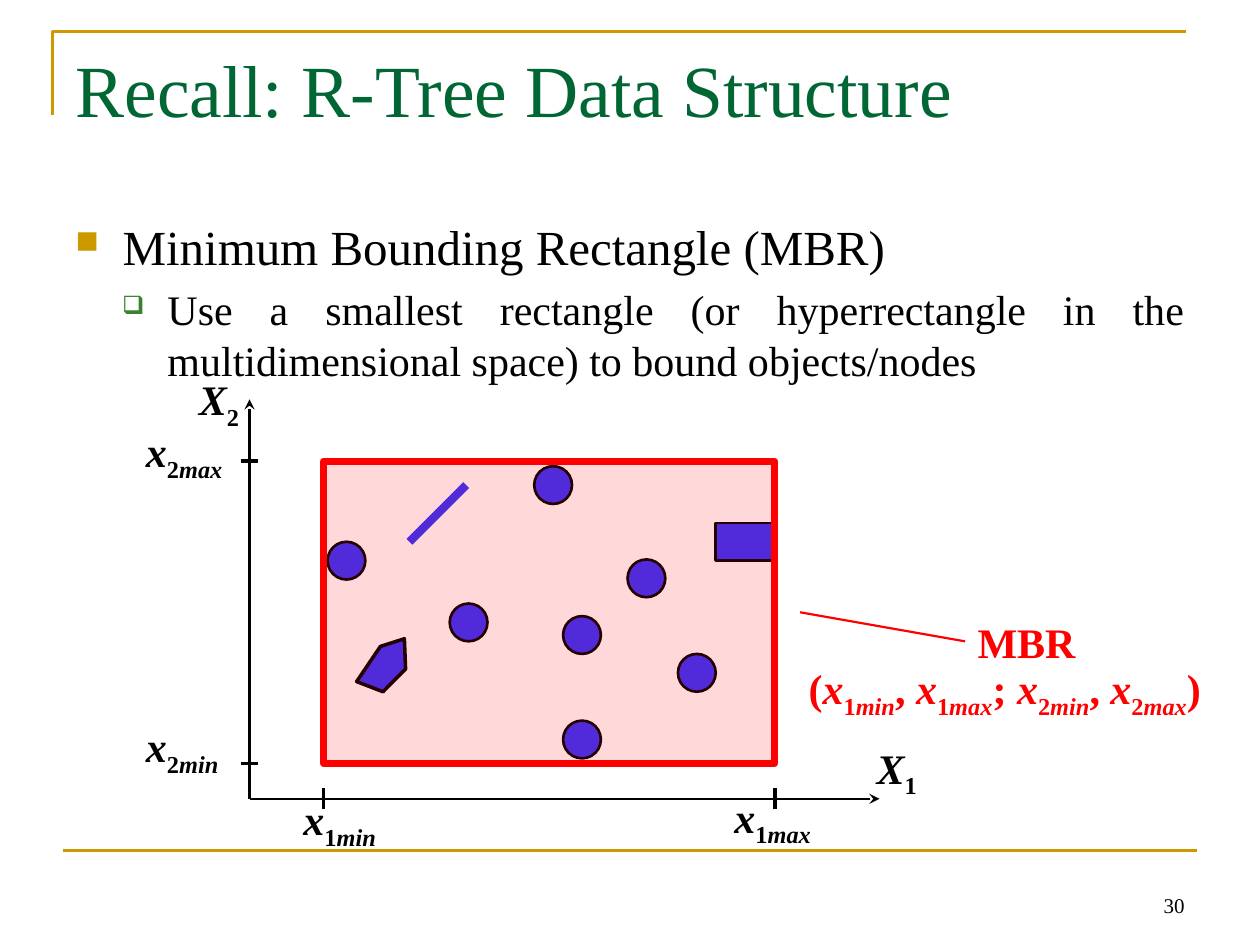
"""Build a slide that explains the minimum bounding rectangle of an R-tree."""
from typing import NamedTuple

from lxml import etree
from pptx import Presentation
from pptx.dml.color import RGBColor
from pptx.enum.shapes import MSO_CONNECTOR, MSO_SHAPE
from pptx.enum.text import MSO_ANCHOR, MSO_AUTO_SIZE, PP_ALIGN
from pptx.oxml.ns import qn
from pptx.util import Pt

STRAIGHT = MSO_CONNECTOR.STRAIGHT
OVAL, RECT = MSO_SHAPE.OVAL, MSO_SHAPE.RECTANGLE
TOP, BOTTOM = MSO_ANCHOR.TOP, MSO_ANCHOR.BOTTOM
LEFT, RIGHT, JUSTIFY = PP_ALIGN.LEFT, PP_ALIGN.RIGHT, PP_ALIGN.JUSTIFY
NO_FIT, GROW = MSO_AUTO_SIZE.NONE, MSO_AUTO_SIZE.SHAPE_TO_FIT_TEXT
LEFT_SIDE = 1
FONT = "Times New Roman"
COLORS = {"gold": "CC9900", "title": "006633", "sub_bullet": "3B812F",
          "black": "000000", "object": "3333FF", "mbr": "FF0000"}


class Box(NamedTuple):
    left: float
    top: float
    width: float
    height: float


class Piece(NamedTuple):
    text: str
    italic: bool = False
    subscript: bool = False


class Bullet(NamedTuple):
    text: str
    size: float
    mark: str
    mark_color: str
    mark_percent: int
    indent: float
    hanging: float


class Label(NamedTuple):
    left: float
    top: float
    width: float
    pieces: list


def variable(letter: str, index: str, bound: str = "") -> list:
    pieces = [Piece(letter, True), Piece(index, False, True)]
    return pieces + ([Piece(bound, True, True)] if bound else [])


def rgb(color: str) -> RGBColor:
    return RGBColor.from_string(COLORS[color])


def apply_format(target, values: dict) -> None:
    for key, value in values.items():
        setattr(target, key, value)


def set_line(shape, color: str, weight: float) -> None:
    shape.line.color.rgb = rgb(color)
    shape.line.width = Pt(weight)


def add_run(paragraph, piece: Piece, size: float, color: str, bold: bool = False) -> None:
    run = paragraph.add_run()
    run.text = piece.text
    apply_format(run.font, {"name": FONT, "size": Pt(size), "bold": bold,
                            "italic": piece.italic})
    run.font.color.rgb = rgb(color)
    if piece.subscript:
        run._r.get_or_add_rPr().set("baseline", "-25000")


def add_text_box(slide, box: Box, **frame_format):
    text_box = slide.shapes.add_textbox(*map(Pt, box))
    apply_format(text_box.text_frame, {"word_wrap": True, "auto_size": NO_FIT, **frame_format})
    return text_box


def add_label(slide, label: Label, color: str = "black"):
    text_box = add_text_box(slide, Box(label.left, label.top, label.width, 36),
                            word_wrap=False, auto_size=GROW)
    for piece in label.pieces:
        add_run(text_box.text_frame.paragraphs[0], piece, 24, color, True)
    return text_box


def add_bullet(paragraph, bullet: Bullet, level: int) -> None:
    apply_format(paragraph, {"alignment": JUSTIFY, "level": level,
                             "space_before": Pt(bullet.size * 0.2)})
    properties = paragraph._p.get_or_add_pPr()
    properties.set("marL", str(Pt(bullet.indent)))
    properties.set("indent", str(-Pt(bullet.hanging)))
    mark_color = etree.SubElement(properties, qn("a:buClr"))
    etree.SubElement(mark_color, qn("a:srgbClr"), val=COLORS[bullet.mark_color])
    etree.SubElement(properties, qn("a:buSzPct"), val=str(bullet.mark_percent * 1000))
    etree.SubElement(properties, qn("a:buChar"), char=bullet.mark)
    add_run(paragraph, Piece(bullet.text), bullet.size, "black")


def add_line(slide, start: tuple, end: tuple, color: str, weight: float, arrow: bool = False):
    connector = slide.shapes.add_connector(STRAIGHT, *map(Pt, (*start, *end)))
    set_line(connector, color, weight)
    if arrow:
        etree.SubElement(connector.line._get_or_add_ln(), qn("a:tailEnd"), type="stealth")
    etree.SubElement(connector._element.spPr, qn("a:effectLst"))
    return connector


def add_outline(slide, points: list, line: tuple, fill: str = ""):
    corners = [(Pt(x), Pt(y)) for x, y in points]
    builder = slide.shapes.build_freeform(*corners[0])
    builder.add_line_segments(corners[1:], close=bool(fill))
    outline = builder.convert_to_shape()
    finish_shape(outline, line, fill)
    return outline


def finish_shape(shape, line: tuple, fill: str) -> None:
    shape.shadow.inherit = False
    set_line(shape, *line)
    if fill:
        shape.fill.solid()
        shape.fill.fore_color.rgb = rgb(fill)
    else:
        shape.fill.background()


def add_filled(slide, kind, box: Box, line: tuple, fill: str):
    shape = slide.shapes.add_shape(kind, *map(Pt, box))
    finish_shape(shape, line, fill)
    return shape


MBR = Box(185, 263.5, 257.8, 172.8)
ORIGIN = (142.6, 456.5)
CIRCLES = [(305.3, 266.4), (187.2, 309.6), (257, 344.9), (321.8, 411.8),
           (358.6, 319.7), (321.8, 352.1), (387.4, 373.7)]
PENTAGON = [(217.4, 369.4), (203.8, 389.5), (218.9, 395.3), (231.8, 382.3), (231.1, 365)]
BULLETS = [
    Bullet("Minimum Bounding Rectangle (MBR)", 28, "■", "gold", 65, 27, 27),
    Bullet("Use a smallest rectangle (or hyperrectangle in the multidimensional space) "
           "to bound objects/nodes", 24, "❑", "sub_bullet", 60, 52.6, 25.9),
]
AXIS_LABELS = [
    Label(493.9, 420.5, 38.9, variable("X", "1")),
    Label(106.6, 210.2, 38.9, variable("X", "2")),
    Label(166.3, 450, 61.2, variable("x", "1", "min")),
    Label(412.6, 448.6, 63.4, variable("x", "1", "max")),
    Label(76.3, 408.2, 61.2, variable("x", "2", "min")),
    Label(76.3, 239.8, 63.4, variable("x", "2", "max")),
]
MBR_BOUNDS = Label(455, 375.1, 263.5, [
    Piece("("), *variable("x", "1", "min"), Piece(", "), *variable("x", "1", "max"),
    Piece("; "), *variable("x", "2", "min"), Piece(", "), *variable("x", "2", "max"),
    Piece(")")])


def add_texts(slide) -> None:
    title = slide.shapes.title
    apply_format(title, dict(zip(Box._fields, map(Pt, (36, 21.6, 648, 90)))))
    apply_format(title.text_frame, {"vertical_anchor": TOP, "auto_size": NO_FIT})
    heading = title.text_frame.paragraphs[0]
    heading.alignment = LEFT
    add_run(heading, Piece("Recall: R-Tree Data Structure"), 42, "title")

    body = add_text_box(slide, Box(36, 120.2, 648, 356.4)).text_frame
    for level, bullet in enumerate(BULLETS):
        paragraph = body.add_paragraph() if level else body.paragraphs[0]
        add_bullet(paragraph, bullet, level)

    number = add_text_box(slide, Box(516.2, 491.8, 167.8, 36), vertical_anchor=BOTTOM)
    page = number.text_frame.paragraphs[0]
    page.alignment = RIGHT
    add_run(page, Piece("30"), 12, "black")


def add_diagram(slide) -> None:
    for left, top in CIRCLES:
        add_filled(slide, OVAL, Box(left, top, 21.6, 21.6), ("black", 1.5), "object")
    add_filled(slide, RECT, Box(409, 298.8, 32.4, 21.6), ("black", 1.5), "object")
    add_line(slide, (266.4, 277.2), (234, 309.6), "object", 4.75)
    add_outline(slide, PENTAGON, ("black", 2), "object")
    frame = add_filled(slide, RECT, MBR, ("mbr", 4), "mbr")
    tint = frame._element.spPr.find(qn("a:solidFill")).find(qn("a:srgbClr"))
    etree.SubElement(tint, qn("a:alpha"), val="15000")
    etree.SubElement(frame.line._get_or_add_ln(), qn("a:round"))

    caption = add_label(slide, Label(551.5, 348.5, 71.3, [Piece("MBR")]), "mbr")
    pointer = add_line(slide, (457.2, 349.9), (551.5, 366.5), "mbr", 1.25)
    pointer.end_connect(caption, LEFT_SIDE)
    add_label(slide, MBR_BOUNDS, "mbr")

    for axis_end in ((502.6, ORIGIN[1]), (ORIGIN[0], 228.2)):
        add_line(slide, ORIGIN, axis_end, "black", 1.5, True)
    for x in (MBR.left, MBR.left + MBR.width):
        add_line(slide, (x, 450), (x, 462.4), "black", 2)
    for y in (MBR.top, MBR.top + MBR.height):
        add_line(slide, (147.6, y), (137.5, y), "black", 2)
    for label in AXIS_LABELS:
        add_label(slide, label)


def main() -> None:
    deck = Presentation()
    apply_format(deck, {"slide_width": Pt(720), "slide_height": Pt(540)})
    slide = deck.slides.add_slide(deck.slide_layouts.get_by_name("Title Only"))
    add_outline(slide, [(30, 66), (30, 18), (678, 18)], ("gold", 1.5))
    add_line(slide, (36, 486), (684, 486), "gold", 1.5)
    add_texts(slide)
    add_diagram(slide)
    deck.save("out.pptx")


if __name__ == "__main__":
    main()
